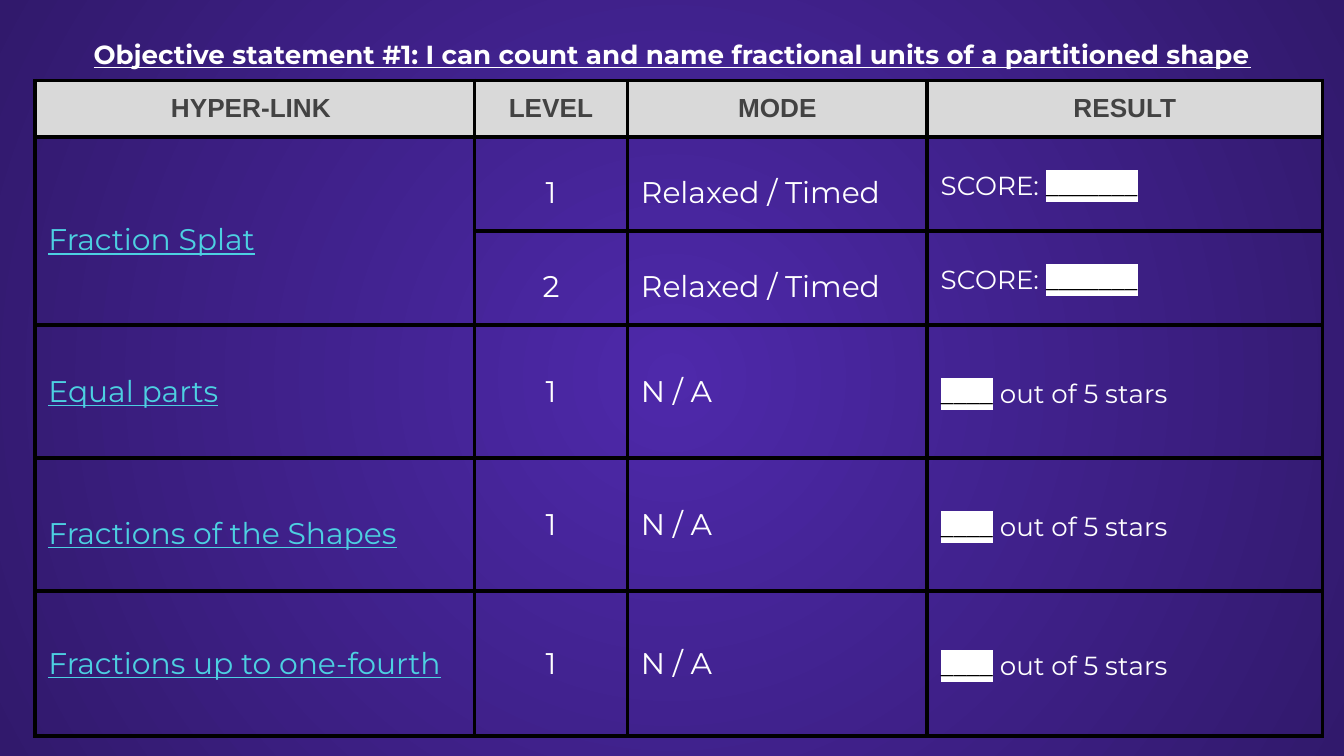
from lxml.etree import SubElement
from pptx import Presentation
from pptx.dml.color import RGBColor
from pptx.enum.text import MSO_ANCHOR, MSO_AUTO_SIZE, PP_ALIGN
from pptx.oxml import parse_xml
from pptx.oxml.ns import nsdecls, qn
from pptx.util import Inches, Pt

WHITE = RGBColor(0xFF, 0xFF, 0xFF)
BLACK = RGBColor(0, 0, 0)
GRAY = RGBColor(0xD9, 0xD9, 0xD9)
DARK_GRAY = RGBColor(0x43, 0x43, 0x43)
CYAN = RGBColor(0x4D, 0xD0, 0xE1)
VIOLET = RGBColor(0x4E, 0x29, 0xAA)
DEEP_VIOLET = RGBColor(0x31, 0x19, 0x6C)

HEADERS = ["HYPER-LINK ", "LEVEL", "MODE", "RESULT"]
COLUMN_WIDTHS = [3.27, 1.14, 2.23, 2.94]
ROW_HEIGHTS = [0.34, 0.7, 0.7, 0.99, 0.99, 1.08]

# Each row: activity, its line spacing, level, mode, result kind
ACTIVITIES = [
    ("Fraction Splat", 1.5, "1", "Relaxed / Timed", "score"),
    ("", None, "2", "Relaxed / Timed", "score"),
    ("Equal parts", None, "1", "N / A", "stars"),
    ("Fractions of the Shapes", 1.5, "1", "N / A", "stars"),
    ("Fractions up to one-fourth", None, "1", "N / A", "stars"),
]


def add_text(para, text, *, size=16, font="Montserrat", color=WHITE, bold=False,
             underline=False, highlight=None, align=PP_ALIGN.LEFT, spacing=None):
    para.alignment = align
    if spacing:
        para.line_spacing = spacing
    span = para.add_run()
    span.text = text
    span.font.size = Pt(size)
    span.font.name = font
    span.font.bold = bold
    span.font.underline = underline
    span.font.color.rgb = color
    if highlight is not None:
        # The highlight must follow the text fill
        span._r.rPr.find(qn("a:solidFill")).addnext(parse_xml(
            f'<a:highlight {nsdecls("a")}><a:srgbClr val="{highlight}"/></a:highlight>'))


def set_background(page):
    fill = page.background.fill
    fill.gradient()
    for stop, color in zip(fill.gradient_stops, (VIOLET, DEEP_VIOLET)):
        stop.color.rgb = color
    gradient = next(page.element.iter(qn("a:gradFill")))
    gradient.remove(gradient.find(qn("a:lin")))
    circle = SubElement(gradient, qn("a:path"), path="circle")
    SubElement(circle, qn("a:fillToRect"), l="50000", t="50000", r="50000", b="50000")


def add_title(page, text):
    box = page.shapes.add_textbox(Inches(0.34), Inches(0.07), Inches(9.32), Inches(0.44))
    frame = box.text_frame
    frame.word_wrap = True
    frame.auto_size = MSO_AUTO_SIZE.SHAPE_TO_FIT_TEXT
    frame.margin_left = frame.margin_right = Inches(0.1)
    frame.margin_top = frame.margin_bottom = Inches(0.1)
    add_text(frame.paragraphs[0], text, size=14, bold=True, underline=True,
             align=PP_ALIGN.CENTER, spacing=1.5)


def style_cell(cell, is_header):
    cell.margin_left = cell.margin_right = Inches(0.1)
    cell.margin_top = cell.margin_bottom = Inches(0.1 if is_header else 0)
    cell.vertical_anchor = MSO_ANCHOR.TOP if is_header else MSO_ANCHOR.MIDDLE
    if is_header:
        cell.fill.solid()
        cell.fill.fore_color.rgb = GRAY
    else:
        cell.fill.background()
    properties = cell._tc.get_or_add_tcPr()
    for index, side in enumerate(("lnL", "lnR", "lnT", "lnB")):
        properties.insert(index, parse_xml(
            f'<a:{side} {nsdecls("a")} w="{Pt(2.25)}"><a:solidFill>'
            f'<a:srgbClr val="{BLACK}"/></a:solidFill></a:{side}>'))


def add_result(para, kind):
    blank = {"size": 14, "color": BLACK, "highlight": WHITE}
    if kind == "score":
        add_text(para, "SCORE: ", size=14, spacing=1.15)
        add_text(para, "_______", **blank)
    else:
        add_text(para, "____", spacing=1.15, **blank)
        add_text(para, " out of 5 stars", size=14)


def add_activity_table(page):
    table = page.shapes.add_table(
        len(ROW_HEIGHTS), len(COLUMN_WIDTHS), Inches(0.26), Inches(0.6),
        Inches(sum(COLUMN_WIDTHS)), Inches(sum(ROW_HEIGHTS))).table
    table.horz_banding = False
    for column, width in zip(table.columns, COLUMN_WIDTHS):
        column.width = Inches(width)
    for index, (row, height) in enumerate(zip(table.rows, ROW_HEIGHTS)):
        row.height = Inches(height)
        for cell in row.cells:
            style_cell(cell, is_header=index == 0)
    table.cell(1, 0).merge(table.cell(2, 0))

    # Header row
    for cell, text in zip(table.rows[0].cells, HEADERS):
        add_text(cell.text_frame.paragraphs[0], text, size=14, font="Arial",
                 color=DARK_GRAY, bold=True, align=PP_ALIGN.CENTER)

    # Activity rows
    for index, (name, name_spacing, level, mode, result) in enumerate(ACTIVITIES, start=1):
        paras = [cell.text_frame.paragraphs[0] for cell in table.rows[index].cells]
        spacing = 1.5 if result == "score" else None
        if name:
            add_text(paras[0], name, color=CYAN, underline=True, spacing=name_spacing)
        add_text(paras[1], level, align=PP_ALIGN.CENTER, spacing=spacing)
        add_text(paras[2], mode, spacing=spacing)
        add_result(paras[3], result)


def main():
    deck = Presentation()
    # Widescreen page, 16:9
    deck.slide_width = Inches(10)
    deck.slide_height = deck.slide_width * 9 // 16
    page = deck.slides.add_slide(deck.slide_layouts[6])
    set_background(page)
    add_activity_table(page)
    add_title(page, "Objective statement #1: I can count and name fractional units "
                    "of a partitioned shape")
    deck.save("out.pptx")


if __name__ == "__main__":
    main()
